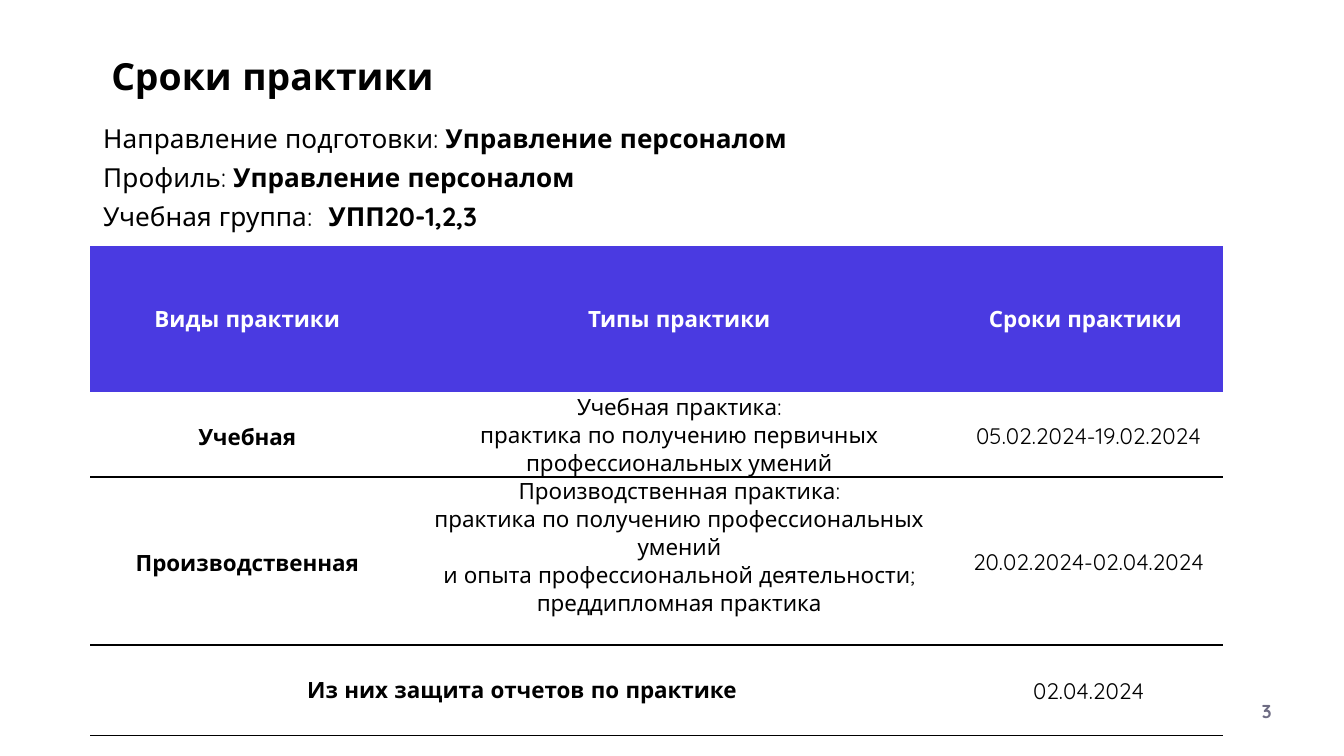
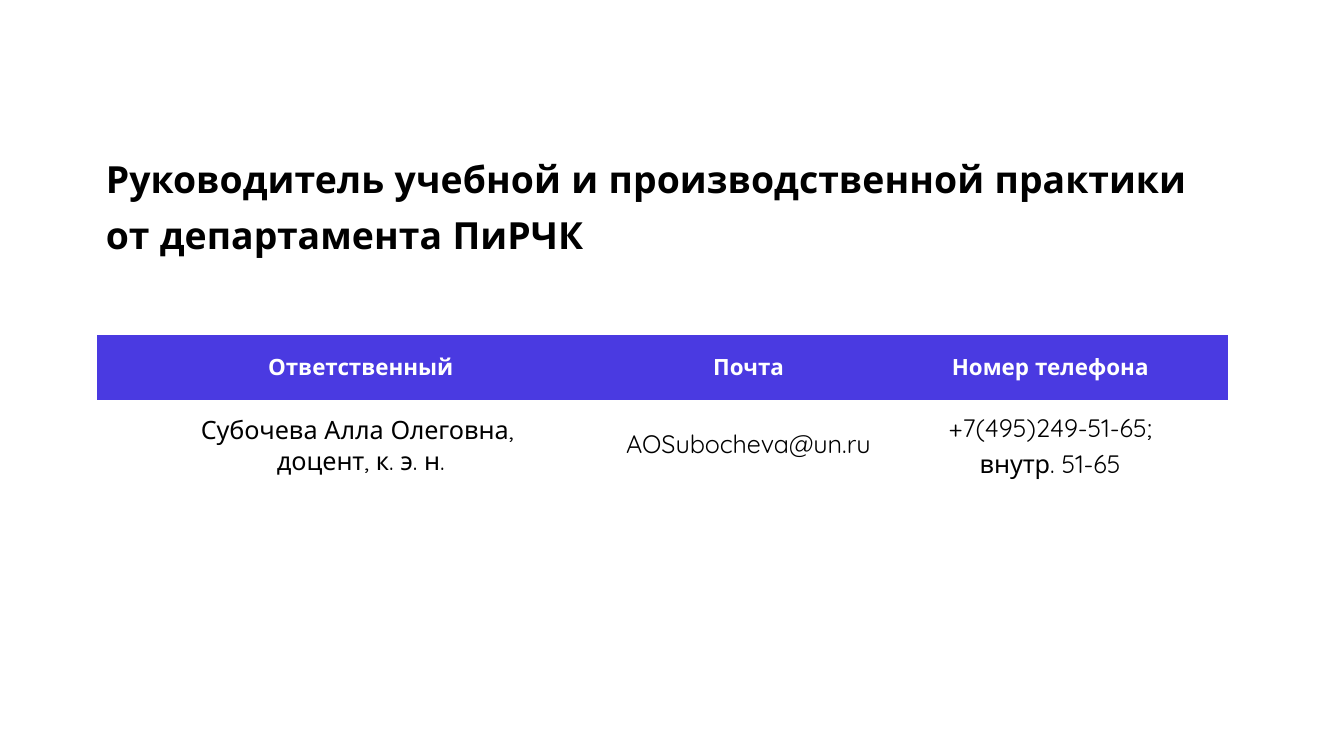
import pptx
import pptx.dml.color
import pptx.enum.text
import pptx.oxml
import pptx.oxml.ns
import pptx.util

Inches = pptx.util.Inches
Align = pptx.enum.text.PP_ALIGN
Anchor = pptx.enum.text.MSO_ANCHOR

FONT = "Quicksand"
VIOLET, WHITE, BLACK, GREY = "4A3AE1", "FFFFFF", "000000", "6E6C83"
NO_GRID_STYLE = "{2D5ABB26-0587-4C30-8999-92F81FD0307C}"
WIDE = (0.1, 0.1, 0.1, 0.1)
FLAT = (0.07, 0, 0.07, 0)


def color(hex_value):
    return pptx.dml.color.RGBColor.from_string(hex_value)


# Text
def add_run(paragraph, text, size, hex_value=BLACK, bold=False):
    run = paragraph.add_run()
    run.text = text
    run.font.name = FONT
    run.font.size = pptx.util.Pt(size)
    run.font.bold = bold
    run.font.color.rgb = color(hex_value)


def next_paragraph(frame, index, align=Align.LEFT, spacing=None):
    paragraph = frame.paragraphs[0] if index == 0 else frame.add_paragraph()
    paragraph.alignment = align
    if spacing:
        paragraph.line_spacing = spacing
    return paragraph


def set_margins(owner, margins):
    sides = ("left", "top", "right", "bottom")
    for side, margin in zip(sides, margins):
        setattr(owner, "margin_" + side, Inches(margin))


def text_frame(slide, box, margins=(0.1, 0.05, 0.1, 0.05), anchor=Anchor.TOP):
    frame = slide.shapes.add_textbox(*map(Inches, box)).text_frame
    frame.word_wrap = True
    frame.vertical_anchor = anchor
    set_margins(frame, margins)
    return frame


def add_title(slide, box, text):
    frame = text_frame(slide, box, WIDE)
    add_run(next_paragraph(frame, 0, spacing=1.25), text, 20, bold=True)


def add_page_number(slide, box, number):
    frame = text_frame(slide, box, anchor=Anchor.MIDDLE)
    paragraph = next_paragraph(frame, 0, Align.RIGHT, 0.9)
    paragraph.space_before = pptx.util.Pt(7.5)
    add_run(paragraph, number, 10, GREY, True)


# Tables
def add_plain_table(slide, left, top, widths, heights):
    frame = slide.shapes.add_table(
        len(heights), len(widths), Inches(left), Inches(top),
        Inches(sum(widths)), Inches(sum(heights)))
    table = frame.table
    table.first_row = table.horz_banding = False
    style = table._tbl.tblPr.find(pptx.oxml.ns.qn("a:tableStyleId"))
    style.text = NO_GRID_STYLE
    for column, width in zip(table.columns, widths):
        column.width = Inches(width)
    for row, height in zip(table.rows, heights):
        row.height = Inches(height)
    for cell in table.iter_cells():
        cell.fill.background()
    return table


def fill_cell(cell, lines, size=12, hex_value=BLACK, bold=False,
              margins=WIDE, spacing=None):
    cell.vertical_anchor = Anchor.MIDDLE
    set_margins(cell, margins)
    for index, line in enumerate(lines):
        paragraph = next_paragraph(cell.text_frame, index, Align.CENTER, spacing)
        add_run(paragraph, line, size, hex_value, bold)


def fill_header(table, labels):
    for column, label in enumerate(labels):
        cell = table.cell(0, column)
        cell.fill.solid()
        cell.fill.fore_color.rgb = color(VIOLET)
        if label:
            fill_cell(cell, [label], hex_value=WHITE, bold=True)


def rule_below(table, row, points):
    for column in range(len(table.columns)):
        line = pptx.oxml.parse_xml(
            f'<a:lnB {pptx.oxml.ns.nsdecls("a")} w="{pptx.util.Pt(points)}">'
            f'<a:solidFill><a:srgbClr val="{BLACK}"/></a:solidFill></a:lnB>')
        table.cell(row, column)._tc.get_or_add_tcPr().insert(0, line)


# Slide with the practice dates
def add_programme(slide, box):
    frame = text_frame(slide, box)
    programme = [("Направление подготовки: ", "Управление персоналом"),
                 ("Профиль: ", "Управление персоналом"),
                 ("Учебная группа: ", "УПП20-1,2,3")]
    for index, (label, value) in enumerate(programme):
        is_group = index == len(programme) - 1
        paragraph = next_paragraph(frame, index, spacing=None if is_group else 1.25)
        add_run(paragraph, label, 14)
        if is_group:
            add_run(paragraph, " ", 18)
        add_run(paragraph, value, 14, bold=True)


def add_schedule(slide, left, top):
    table = add_plain_table(slide, left, top, [2.34, 4.09, 2],
                            [1.09, 0.63, 1.02, 0.67])
    fill_header(table, ["Виды практики", "Типы практики", "Сроки практики "])
    practices = [
        ("Учебная",
         ["Учебная практика:",
          "практика по получению первичных профессиональных умений"],
         "05.02.2024-19.02.2024", FLAT),
        ("Производственная",
         ["Производственная практика:",
          "практика по получению профессиональных умений",
          "и опыта профессиональной деятельности;",
          "преддипломная практика"],
         "20.02.2024-02.04.2024", (0.07, 0, 0.07, 0.21)),
    ]
    for row, (kind, types, dates, margins) in enumerate(practices, 1):
        fill_cell(table.cell(row, 0), [kind], bold=True, spacing=1.14)
        fill_cell(table.cell(row, 1), types, margins=margins)
        fill_cell(table.cell(row, 2), [dates], spacing=1.07)
        rule_below(table, row, 1)

    # Report defence
    table.cell(3, 0).merge(table.cell(3, 1))
    fill_cell(table.cell(3, 0), ["Из них защита отчетов по практике"], bold=True)
    fill_cell(table.cell(3, 2), ["02.04.2024"], margins=FLAT, spacing=1.07)
    rule_below(table, 3, 0.75)


def build_dates_slide(slide):
    add_schedule(slide, 0.67, 1.83)
    add_title(slide, (0.73, 0.21, 8.43, 0.67), "Сроки практики")
    add_programme(slide, (0.67, 0.8, 9.07, 0.99))
    add_page_number(slide, (5.5, 5.14, 4.06, 0.33), "3")


# Slide with the practice supervisor
def add_contacts(slide, left, top):
    table = add_plain_table(slide, left, top, [0.23, 3.45, 2.32, 2.17, 0.23],
                            [0.49, 0.62])
    fill_header(table, ["", "Ответственный", "Почта", "Номер телефона", ""])
    fill_cell(table.cell(1, 1),
              ["Субочева Алла Олеговна, ", "доцент, к. э. н."], 13.5)
    fill_cell(table.cell(1, 2), ["AOSubocheva@un.ru"], 13.5)
    fill_cell(table.cell(1, 3), ["+7(495)249-51-65; внутр. 51-65"], 13.5,
              margins=(0.04,) * 4, spacing=1.15)


def build_supervisor_slide(slide):
    add_title(slide, (0.69, 0.98, 8.43, 1.14),
              "Руководитель учебной и производственной практики "
              "от департамента ПиРЧК")
    add_contacts(slide, 0.72, 2.49)


def main():
    deck = pptx.Presentation()
    # Widescreen, 16:9
    deck.slide_width = Inches(10)
    deck.slide_height = Inches(10 * 9 / 16)
    for build in (build_dates_slide, build_supervisor_slide):
        slide = deck.slides.add_slide(deck.slide_layouts[6])
        slide.background.fill.solid()
        slide.background.fill.fore_color.rgb = color(WHITE)
        build(slide)
    deck.save("out.pptx")


if __name__ == "__main__":
    main()
